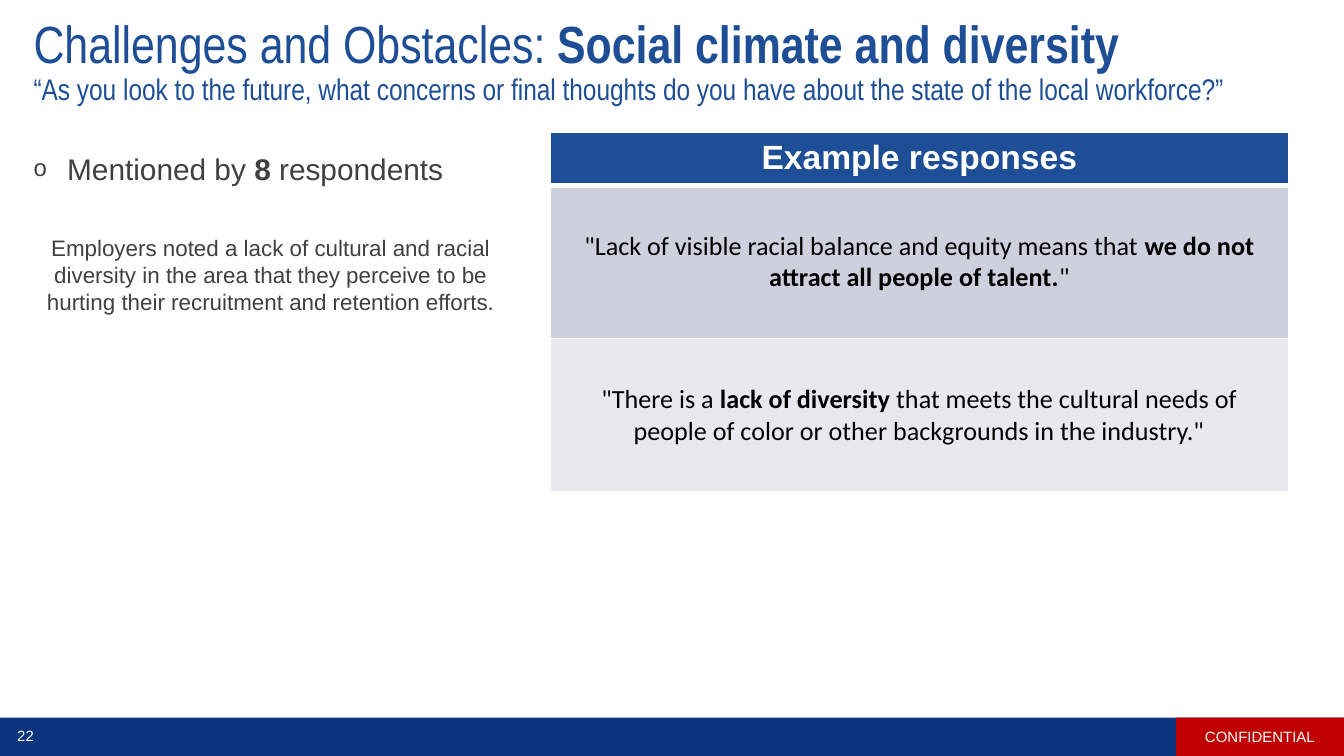
from lxml import etree
from pptx import Presentation
from pptx.dml.color import RGBColor
from pptx.enum import shapes, text
from pptx.oxml import ns
from pptx.util import Pt

COLORS = {
    "title": "1E4E96", "footer": "0A357E", "confidential": "C00000",
    "white": "FFFFFF", "black": "000000", "body": "404040",
    "response_1": "CDD0DD", "response_2": "E8E9EF",
}


def write(paragraph, runs, font, size, color, align=text.PP_ALIGN.LEFT):
    """Fill a paragraph with (wording, bold) runs in one font."""
    paragraph.alignment = align
    paragraph.font.name = font
    paragraph.font.size = Pt(size)
    paragraph.font.color.rgb = RGBColor.from_string(COLORS[color])
    for wording, bold in runs:
        run = paragraph.add_run()
        run.text = wording
        run.font.bold = bold


def add_xml(parent, tag, **attributes):
    return etree.SubElement(parent, ns.qn(tag), attributes)


prs = Presentation()
prs.slide_width, prs.slide_height = Pt(720), Pt(405)
slide = prs.slides.add_slide(prs.slide_layouts[1])
CENTER = text.PP_ALIGN.CENTER
MIDDLE = text.MSO_ANCHOR.MIDDLE

# Footer
bars = []
for left, width, color in [(0, 720, "footer"), (630, 90, "confidential")]:
    bar = slide.shapes.add_shape(
        shapes.MSO_SHAPE.RECTANGLE, Pt(left), Pt(384.5), Pt(width), Pt(20.5))
    bar.shadow.inherit = False
    bar.fill.solid()
    bar.fill.fore_color.rgb = RGBColor.from_string(COLORS[color])
    bar.line.fill.background()
    bars.append(bar)
confidential = bars[1].text_frame
confidential.vertical_anchor = MIDDLE
write(confidential.paragraphs[0], [("CONFIDENTIAL", False)], "Arial", 8, "white", CENTER)

page_number = slide.shapes.add_textbox(Pt(0), Pt(385.2), Pt(27.4), Pt(17.3)).text_frame
page_number.word_wrap = True
page_number.vertical_anchor = MIDDLE
write(page_number.paragraphs[0], [("22", False)], "Arial", 8, "white", CENTER)

# Title and survey question
title = slide.shapes.title
title.left, title.top, title.width, title.height = Pt(10.8), Pt(10.8), Pt(696), Pt(45.4)
heading = title.text_frame
heading.auto_size = text.MSO_AUTO_SIZE.NONE
heading.vertical_anchor = MIDDLE
heading.margin_left = heading.margin_top = heading.margin_bottom = Pt(7.2)
heading.margin_right = Pt(14.4)
headline = heading.paragraphs[0]
headline.line_spacing = 0.9
write(headline, [("Challenges and Obstacles: ", False), ("Social climate and diversity", True)],
      "Arial Narrow", 28, "title")
headline.add_line_break()
question = headline.add_run()
question.text = ("“As you look to the future, what concerns or final thoughts "
                 "do you have about the state of the local workforce?”")
question.font.size = Pt(16)

# Findings
body = slide.placeholders[1]
body.left, body.top, body.width, body.height = Pt(10.8), Pt(77), Pt(268.6), Pt(194.4)
findings = body.text_frame
findings.auto_size = text.MSO_AUTO_SIZE.NONE
mentions, summary = findings.paragraphs[0], findings.add_paragraph()

bullet = mentions._p.get_or_add_pPr()
bullet.set("marL", str(Pt(18)))
bullet.set("indent", str(-Pt(18)))
add_xml(bullet, "a:buSzPct", val="80000")
add_xml(bullet, "a:buFont", typeface="Arial")
add_xml(bullet, "a:buChar", char="o")
mentions.space_before = Pt(0)
write(mentions, [("Mentioned by ", False), ("8", True), (" respondents", False)],
      "Arial", 16, "body")

plain = summary._p.get_or_add_pPr()
plain.set("marL", "0")
plain.set("indent", "0")
add_xml(plain, "a:buNone")
summary.space_before = Pt(25.5)
write(summary, [("Employers noted a lack of cultural and racial diversity in the area that they "
                 "perceive to be hurting their recruitment and retention efforts.", False)],
      "Arial", 12, "body", CENTER)

# Example responses: runs, font, size, text colour, fill, bottom border
rows = [
    ([("Example responses", True)], "Arial", 18, "white", "title", 3),
    ([('"Lack of visible racial balance and equity means that ', False),
      ("we do not attract all people of talent.", True), ('"', False)],
     "Calibri", 14, "black", "response_1", 1),
    ([('"There is a ', False), ("lack of diversity ", True),
      ('that meets the cultural needs of people of color or other backgrounds in the industry."',
       False)],
     "Calibri", 14, "black", "response_2", 1),
]
responses = slide.shapes.add_table(
    len(rows), 1, Pt(294.5), Pt(70.6), Pt(396), Pt(192)).table
top_border = 1
for index, (runs, font, size, color, fill, bottom_border) in enumerate(rows):
    responses.rows[index].height = Pt(28 if index == 0 else 82)
    cell = responses.cell(index, 0)
    cell.vertical_anchor = MIDDLE if index else text.MSO_ANCHOR.TOP
    write(cell.text_frame.paragraphs[0], runs, font, size, color, CENTER)
    properties = cell._tc.get_or_add_tcPr()
    for side, width in zip("LRTB", (1, 1, top_border, bottom_border)):
        border = add_xml(properties, f"a:ln{side}", w=str(Pt(width)))
        add_xml(add_xml(border, "a:solidFill"), "a:srgbClr", val=COLORS["white"])
    cell.fill.solid()
    cell.fill.fore_color.rgb = RGBColor.from_string(COLORS[fill])
    top_border = bottom_border

prs.save("out.pptx")
